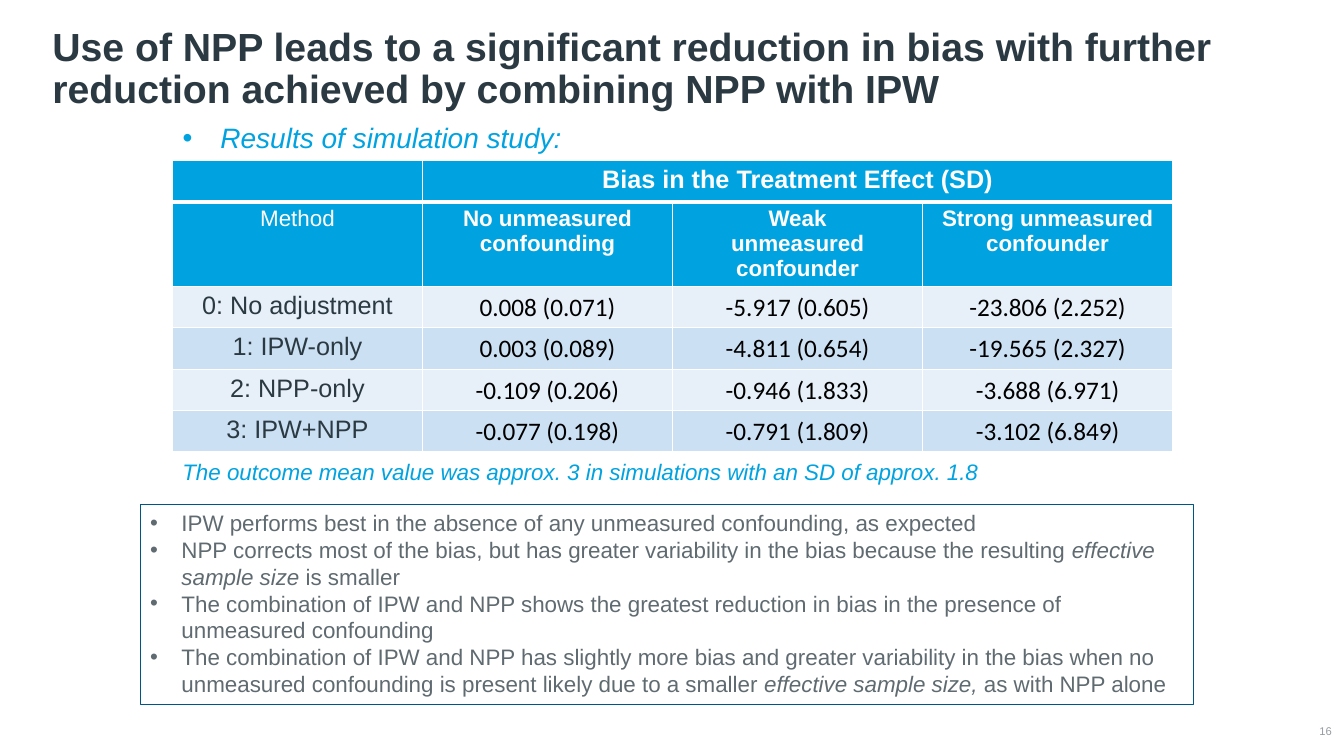
from dataclasses import dataclass

from lxml.etree import SubElement
from pptx import Presentation
from pptx.dml.color import RGBColor as RGB
from pptx.enum.text import MSO_ANCHOR as Anchor, MSO_AUTO_SIZE as AutoSize, PP_ALIGN as Align
from pptx.oxml.ns import qn
from pptx.util import Inches, Pt


@dataclass(frozen=True)
class Theme:
    font: str = "Arial"
    value_font: str = "Calibri"
    accent: str = "00A3E0"
    ink: str = "2B3A42"
    body: str = "606B71"
    value: str = "000000"
    outline: str = "005587"
    muted: str = "959CA0"
    white: str = "FFFFFF"
    bands: tuple = ("E7F0F9", "CCE0F3")
    title_size: int = 28
    lead_size: int = 20
    table_size: int = 18
    text_size: int = 16
    number_size: int = 8


THEME = Theme()
WIDTH, HEIGHT = Inches(13.33), Inches(7.5)

# Left, top, width and height as percentages of the slide
TITLE_BOX = (3.15, 4.27, 93.02, 11.2)
LEAD_BOX = (12.83, 15.73, 83.35, 5.87)
TABLE_BOX = (12.83, 21.2, 74.42, 38.5)
NOTE_BOX = (12.83, 60, 74.42, 4.93)
FINDINGS_BOX = (10.43, 66.67, 78.39, 26.53)
NUMBER_BOX = (96.17, 95.47, 2.93, 2.53)

ROW_SHARES = (1, 2.03, 1, 1, 1, 1)
BIAS_HEADING = "Bias in the Treatment Effect (SD)"
COLUMN_HEADS = ("Method", "No unmeasured confounding",
                "Weak\nunmeasured confounder", "Strong unmeasured confounder")
RESULTS = (
    ("0: No adjustment", "0.008 (0.071)", "-5.917 (0.605)", "-23.806 (2.252)"),
    ("1: IPW-only", "0.003 (0.089)", "-4.811 (0.654)", "-19.565 (2.327)"),
    ("2: NPP-only", "-0.109 (0.206)", "-0.946 (1.833)", "-3.688 (6.971)"),
    ("3: IPW+NPP", "-0.077 (0.198)", "-0.791 (1.809)", "-3.102 (6.849)"),
)
# Words between asterisks are set in italics
FINDINGS = (
    "IPW performs best in the absence of any unmeasured confounding, as expected",
    "NPP corrects most of the bias, but has greater variability in the bias because "
    "the resulting *effective sample size* is smaller",
    "The combination of IPW and NPP shows the greatest reduction in bias in the "
    "presence of unmeasured confounding",
    "The combination of IPW and NPP has slightly more bias and greater variability in "
    "the bias when no unmeasured confounding is present likely due to a smaller "
    "*effective sample size,* as with NPP alone",
)


def emu(box):
    left, top, width, height = box
    return [round(share * side / 100) for share, side in
            ((left, WIDTH), (top, HEIGHT), (width, WIDTH), (height, HEIGHT))]


def style(run, size, color, bold=False, italic=False, font=THEME.font):
    run.font.size, run.font.name = Pt(size), font
    run.font.bold, run.font.italic = bold, italic
    run.font.color.rgb = RGB.from_string(color)


def write(frame, text, size, color, align=Align.LEFT, spacing=1, **look):
    frame.text = text
    for paragraph in frame.paragraphs:
        paragraph.alignment, paragraph.line_spacing = align, spacing
        paragraph.space_before = Pt(0)
        for run in paragraph.runs:
            style(run, size, color, **look)


def place(shape, box, anchor=Anchor.TOP):
    shape.left, shape.top, shape.width, shape.height = emu(box)
    frame = shape.text_frame
    frame.word_wrap, frame.auto_size = True, AutoSize.NONE
    frame.vertical_anchor = anchor
    return frame


def set_bullet(paragraph, char=None, indent=0):
    props = paragraph._p.get_or_add_pPr()
    props.set("marL", str(indent))
    props.set("indent", str(-indent))
    if char:
        SubElement(props, qn("a:buFont"), typeface=THEME.font)
        SubElement(props, qn("a:buChar"), char=char)
    else:
        SubElement(props, qn("a:buNone"))


def paint_cell(cell, fill, top=1, bottom=1):
    props = cell._tc.get_or_add_tcPr()
    for side, points in (("L", 1), ("R", 1), ("T", top), ("B", bottom)):
        line = SubElement(props, qn(f"a:ln{side}"), w=str(Pt(points)))
        SubElement(SubElement(line, qn("a:solidFill")), qn("a:srgbClr"), val=THEME.white)
    cell.fill.solid()
    cell.fill.fore_color.rgb = RGB.from_string(fill)


def add_heading(slide, box, text):
    frame = place(slide.shapes.title, box, Anchor.BOTTOM)
    write(frame, text, THEME.title_size, THEME.ink, spacing=0.9, bold=True)


def add_lead(slide, box, text):
    frame = place(slide.placeholders[1], box)
    frame.text = text
    set_bullet(frame.paragraphs[0])
    write(frame, text, THEME.lead_size, THEME.accent, spacing=0.9, italic=True)


def add_results(slide, box):
    rows = (("", BIAS_HEADING, "", ""), COLUMN_HEADS) + RESULTS
    left, top, width, height = emu(box)
    table = slide.shapes.add_table(len(rows), len(COLUMN_HEADS),
                                   left, top, width, height).table
    for column in table.columns:
        column.width = width // len(COLUMN_HEADS)
    for row, share in zip(table.rows, ROW_SHARES):
        row.height = round(height * share / sum(ROW_SHARES))

    for r, texts in enumerate(rows):
        for c, text in enumerate(texts):
            cell = table.cell(r, c)
            # Two heading rows parted by a thicker rule, then banded results
            if r < 2:
                paint_cell(cell, THEME.accent, top=(1, 3)[r], bottom=(3, 1)[r])
                look = dict(size=(THEME.table_size, THEME.text_size)[r],
                            color=THEME.white, bold=c > 0)
            else:
                paint_cell(cell, THEME.bands[r % 2])
                look = dict(size=THEME.table_size, color=THEME.ink)
                if c:
                    look.update(color=THEME.value, font=THEME.value_font)
                    cell.vertical_anchor = Anchor.MIDDLE
                    cell.margin_left = cell.margin_right = cell.margin_top = Inches(0.01)
                    cell.margin_bottom = 0
            if text:
                write(cell.text_frame, text, align=Align.CENTER, **look)
    table.cell(0, 1).merge(table.cell(0, 3))


def add_findings(slide, box):
    panel = slide.placeholders[2]
    frame = place(panel, box)
    panel.line.color.rgb = RGB.from_string(THEME.outline)
    panel.line.width = Pt(0.75)
    for i, finding in enumerate(FINDINGS):
        paragraph = frame.add_paragraph() if i else frame.paragraphs[0]
        set_bullet(paragraph, "•", Inches(0.31))
        paragraph.space_before = Pt(0)
        for part, words in enumerate(finding.split("*")):
            run = paragraph.add_run()
            run.text = words
            style(run, THEME.text_size, THEME.body, italic=part % 2 == 1)


def add_note(slide, box, text):
    frame = place(slide.shapes.add_textbox(*emu(box)), box)
    write(frame, text, THEME.text_size, THEME.accent, italic=True)


def add_number(slide, box, text):
    frame = place(slide.shapes.add_textbox(*emu(box)), box, Anchor.MIDDLE)
    frame.margin_left = frame.margin_right = frame.margin_top = frame.margin_bottom = 0
    write(frame, text, THEME.number_size, THEME.muted, Align.RIGHT)


def main():
    deck = Presentation()
    deck.slide_width, deck.slide_height = WIDTH, HEIGHT
    slide = deck.slides.add_slide(deck.slide_layouts.get_by_name("Two Content"))
    add_heading(slide, TITLE_BOX, "Use of NPP leads to a significant reduction in bias with "
                "further reduction achieved by combining NPP with IPW")
    add_lead(slide, LEAD_BOX, "Results of simulation study:")
    add_results(slide, TABLE_BOX)
    add_findings(slide, FINDINGS_BOX)
    add_note(slide, NOTE_BOX, "The outcome mean value was approx. 3 in simulations "
             "with an SD of approx. 1.8")
    add_number(slide, NUMBER_BOX, "16")
    deck.save("out.pptx")


if __name__ == "__main__":
    main()
